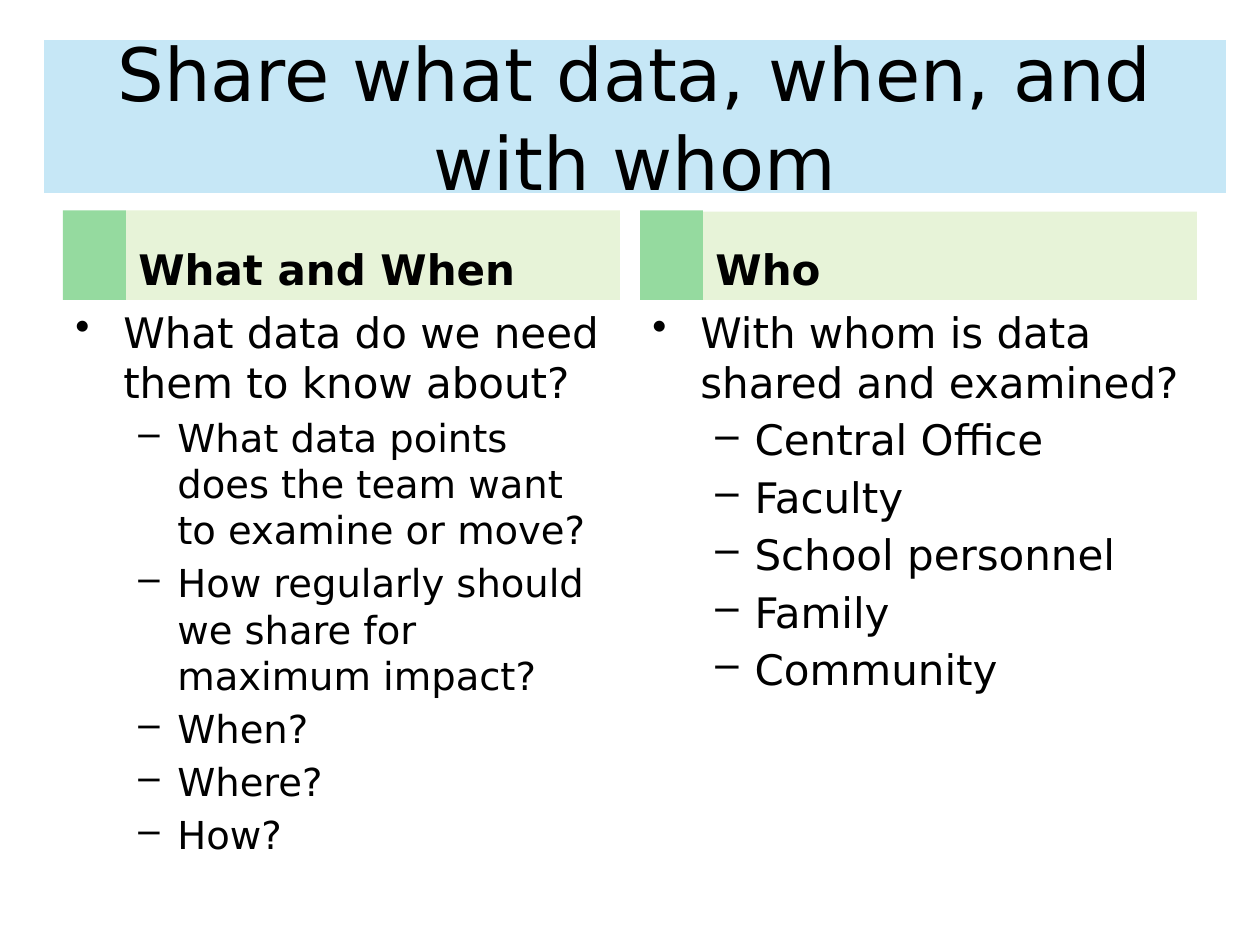
"""Build a slide on which data to share, when, and with whom."""
from dataclasses import dataclass

from lxml import etree
from pptx import Presentation
from pptx import util as u
from pptx.dml.color import RGBColor
from pptx.enum import shapes, text
from pptx.oxml import ns

WIDTH, HEIGHT = u.Inches(10), u.Inches(7.5)
FONT = "DejaVu Sans"
COLORS = {"title": "A9DCF2", "accent": "95DA9F", "header": "E7F3D8",
          "text": "000000", "edge": "FFFFFF"}
MARGIN, COLUMN, PITCH, ACCENT = 0.05, 0.442, 0.458, 0.05
HEAD_BOTTOM, ACCENT_TOP = 2.38 / 7.5, 1.67 / 7.5


@dataclass
class Box:
    """Position and extent as shares of the slide's size."""
    x: float
    y: float
    w: float
    h: float

    def emu(self) -> tuple[int, ...]:
        return (round(self.x * WIDTH), round(self.y * HEIGHT),
                round(self.w * WIDTH), round(self.h * HEIGHT))


@dataclass
class Column:
    """A headed list with one lead question and its sub-points."""
    heading: str
    lead: str
    points: list[str]
    point_size: int
    header_top: float
    body_height: float


@dataclass
class Level:
    """Bullet character and indents in inches, with space before in points."""
    char: str
    left: float
    hanging: float
    before: int


LEVELS = [Level("•", 0.38, 0.38, 0), Level("–", 0.81, 0.31, 4)]
COLUMNS = [
    Column("What and When", "What data do we need them to know about?",
           ["What data points does the team want to examine or move?",
            "How regularly should we share for maximum impact?",
            "When?", "Where?", "How?"], 22, 1.67 / 7.5, 4.45 / 7.5),
    Column("Who", "With whom is data shared and examined?",
           ["Central Office", "Faculty", "School personnel", "Family", "Community"],
           24, 1.68 / 7.5, 4.32 / 7.5),
]


def add_rect(s, box: Box, color: str):
    sp = s.shapes.add_shape(shapes.MSO_SHAPE.RECTANGLE, *box.emu())
    sp.shadow.inherit = False
    sp.fill.solid()
    sp.fill.fore_color.rgb = RGBColor.from_string(COLORS[color])
    sp.line.fill.background()
    return sp


def style(p, size: int, bold: bool = False) -> None:
    for r in p.runs:
        r.font.name, r.font.size, r.font.bold = FONT, u.Pt(size), bold
        r.font.color.rgb = RGBColor.from_string(COLORS["text"])


def set_text(sp, words: str, size: int, align, anchor, bold: bool = False) -> None:
    tf = sp.text_frame
    tf.word_wrap, tf.vertical_anchor = True, anchor
    tf.text = words
    tf.paragraphs[0].alignment = align
    style(tf.paragraphs[0], size, bold)


def set_bullet(p, level: Level) -> None:
    if level.before:
        p.space_before = u.Pt(level.before)
    pr = p._p.get_or_add_pPr()
    pr.set("marL", str(u.Inches(level.left)))
    pr.set("indent", str(-u.Inches(level.hanging)))
    color = etree.SubElement(pr, ns.qn("a:buClr"))
    etree.SubElement(color, ns.qn("a:srgbClr"), val=COLORS["text"])
    etree.SubElement(pr, ns.qn("a:buChar"), char=level.char)


def add_title(s, words: str) -> None:
    sp = add_rect(s, Box(0.033, 0.04, 0.942, 1.25 / 7.5), "title")
    color = sp.fill._xPr.find(".//" + ns.qn("a:srgbClr"))
    etree.SubElement(color, ns.qn("a:alpha"), val="66000")
    sp.line.color.rgb = RGBColor.from_string(COLORS["edge"])
    sp.line.width = u.Pt(2.25)
    set_text(sp, words, 42, text.PP_ALIGN.CENTER, text.MSO_ANCHOR.MIDDLE)


def add_column(s, x: float, col: Column) -> None:
    add_rect(s, Box(x, ACCENT_TOP, ACCENT, HEAD_BOTTOM - ACCENT_TOP), "accent")
    header = add_rect(s, Box(x + ACCENT, col.header_top, COLUMN - ACCENT,
                             HEAD_BOTTOM - col.header_top), "header")
    set_text(header, col.heading, 24, text.PP_ALIGN.LEFT,
             text.MSO_ANCHOR.BOTTOM, bold=True)
    body = s.shapes.add_textbox(*Box(x, HEAD_BOTTOM, COLUMN, col.body_height).emu())
    tf = body.text_frame
    tf.word_wrap = True
    tf.text = "\n".join([col.lead, *col.points])
    for i, p in enumerate(tf.paragraphs):
        p.level = min(i, 1)
        set_bullet(p, LEVELS[p.level])
        style(p, col.point_size if i else 24)


def main() -> None:
    prs = Presentation()
    prs.slide_width, prs.slide_height = WIDTH, HEIGHT
    s = prs.slides.add_slide(prs.slide_layouts[6])
    add_title(s, "Share what data, when, and with whom")
    for i, col in enumerate(COLUMNS):
        add_column(s, MARGIN + i * PITCH, col)
    prs.save("out.pptx")


if __name__ == "__main__":
    main()
